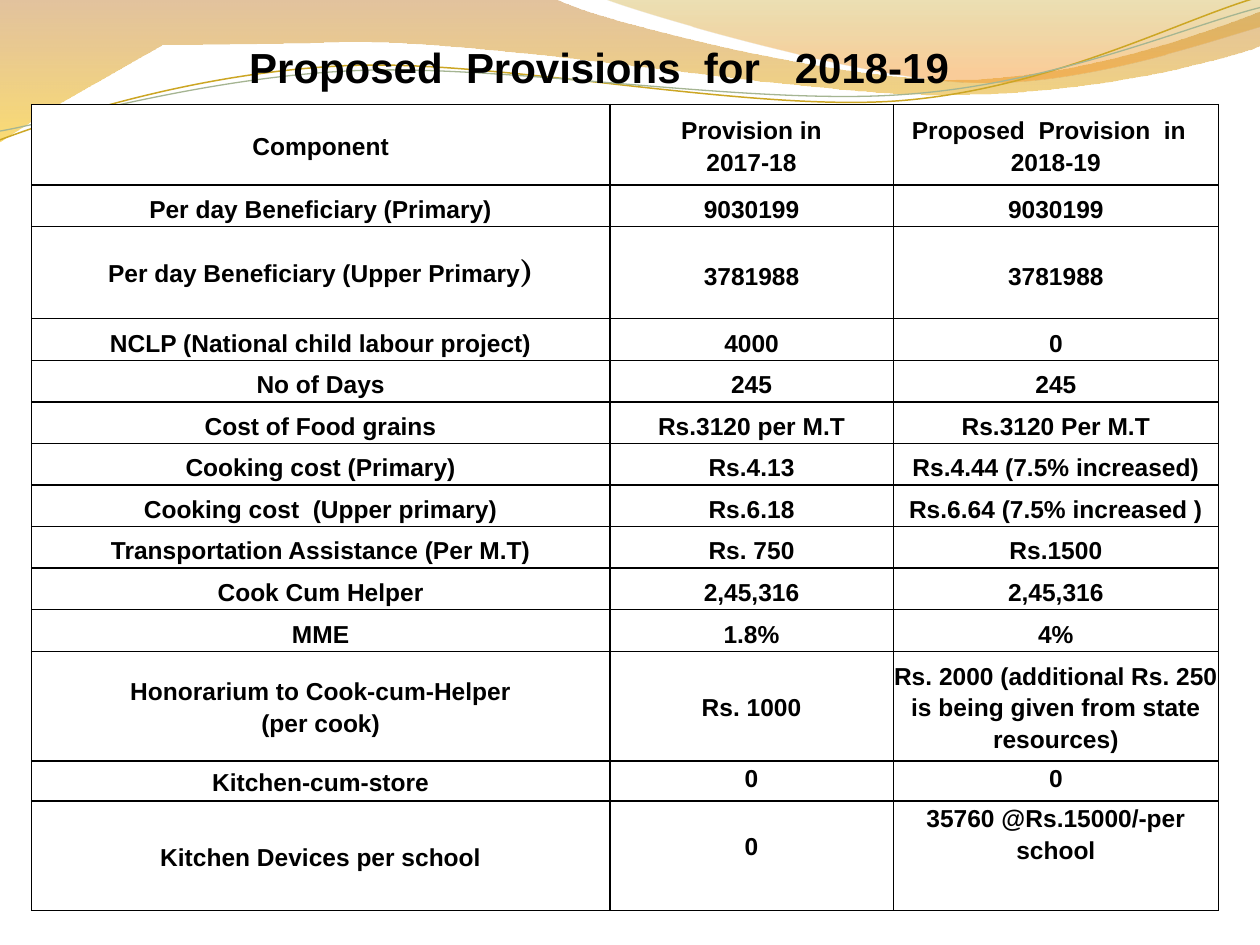
import math
from dataclasses import dataclass

import pptx
import pptx.dml.color
import pptx.enum.text
import pptx.oxml
import pptx.oxml.ns
import pptx.util
from lxml import etree

COLUMNS, ROWS = 10, 7.5
FONT = "Arial"
BLACK, WHITE = "000000", "FFFFFF"
DRAWING = "http://schemas.openxmlformats.org/drawingml/2006/main"
MIDDLE = pptx.enum.text.MSO_ANCHOR.MIDDLE
TOP = pptx.enum.text.MSO_ANCHOR.TOP
CENTER = pptx.enum.text.PP_ALIGN.CENTER
EXACT = pptx.util.Pt(20.4)
LOOSE = 1.15


@dataclass
class Stop:
    position: int
    color: str
    opacity: int


@dataclass
class Band:
    segments: str
    points: list[tuple[float, float]]
    stops: list[Stop]


@dataclass
class Wave:
    points: list[tuple[float, float]]
    color: str
    width: float


@dataclass
class Row:
    height: float
    texts: tuple[str, str, str]
    spacing: float = EXACT
    value_anchor: pptx.enum.text.MSO_ANCHOR = MIDDLE


BANDS = [
    Band("LCCLCC", [
        (0, 0), (4.4, -0.01), (4.76, 0.17), (6.64, 0.63), (7.58, 0.63),
        (8.53, 0.63), (9.58, 0.26), (10, 0.09), (10.01, 0.36),
        (9.83, 0.44), (8.7, 0.76), (7.46, 0.75), (6.22, 0.75), (3.82, 0.28),
        (2.57, 0.34), (1.29, 0.36), (0.46, 0.83), (-0.01, 1.13),
    ], [Stop(0, "C07A28", 45), Stop(100, "F7BF00", 55)]),
    Band("CCL", [
        (4.79, -0.01), (5.09, 0.11), (6.82, 0.62), (7.69, 0.65),
        (8.56, 0.69), (9.61, 0.32), (10, 0.21), (10, 0),
    ], [Stop(0, "C09709", 30), Stop(80, "F59320", 45)]),
]
WAVES = [
    Wave([(0, 1.11), (0.48, 0.93), (1.58, 0.57), (2.77, 0.52), (3.95, 0.47),
          (5.93, 0.89), (7.13, 0.8), (8.33, 0.71), (9.38, 0.15), (9.98, -0.02)],
         "CCA624", 0.85),
    Wave([(0, 1.04), (0.47, 0.96), (1.64, 0.61), (2.83, 0.56), (4.03, 0.51),
          (5.97, 0.84), (7.17, 0.75), (8.36, 0.67), (9.41, 0.21), (10, 0.06)],
         "A5B592", 0.75),
]
WAVE_TILT = -2.7
WAVE_CENTER = (4.99, 0.58)

TABLE_COLUMNS = (4.59, 2.25, 2.58)
TABLE_ROWS = [
    Row(0.64, ("Component", "Provision in\n2017-18", "Proposed  Provision  in   2018-19"), LOOSE),
    Row(0.33, ("Per day Beneficiary (Primary)", "9030199", "9030199")),
    Row(0.73, ("Per day Beneficiary (Upper Primary", "3781988", "3781988")),
    Row(0.33, ("NCLP (National child labour project)", "4000", "0")),
    Row(0.33, ("No of Days", "245", "245")),
    Row(0.33, ("Cost of Food grains", "Rs.3120 per M.T", "Rs.3120 Per M.T")),
    Row(0.33, ("Cooking cost (Primary)", "Rs.4.13", "Rs.4.44 (7.5% increased)")),
    Row(0.33, ("Cooking cost  (Upper primary)", "Rs.6.18", "Rs.6.64 (7.5% increased )")),
    Row(0.33, ("Transportation Assistance (Per M.T)", "Rs. 750", "Rs.1500")),
    Row(0.33, ("Cook Cum Helper", "2,45,316", "2,45,316")),
    Row(0.33, ("MME", "1.8%", "4%")),
    Row(0.87, ("Honorarium to Cook-cum-Helper\n(per cook)", "Rs. 1000",
               "Rs. 2000 (additional Rs. 250 is being given from state resources)"), LOOSE),
    Row(0.32, ("Kitchen-cum-store", "0", "0"), LOOSE, TOP),
    Row(0.87, ("Kitchen Devices per school", "0", "35760 @Rs.15000/-per school"), LOOSE, TOP),
]


def rgb(color: str):
    return pptx.dml.color.RGBColor.from_string(color)


def grid(cells: float):
    return pptx.util.Inches(cells)


def style_run(r, size: float, name: str = FONT) -> None:
    r.font.size = pptx.util.Pt(size)
    r.font.name = name
    r.font.bold = True
    r.font.color.rgb = rgb(BLACK)


def draw_curves(s, points, segments: str, close: bool):
    places = [(grid(x), grid(y)) for x, y in points]
    builder = s.shapes.build_freeform(*places[0], scale=1.0)
    builder.add_line_segments(places[1:], close=close)
    sp = builder.convert_to_shape()
    sp.shadow.inherit = False
    lines = iter(sp.element.findall(".//" + pptx.oxml.ns.qn("a:lnTo")))
    for segment in segments:
        line = next(lines)
        if segment == "C":
            curve = etree.Element(pptx.oxml.ns.qn("a:cubicBezTo"))
            line.addprevious(curve)
            for control in (line, next(lines), next(lines)):
                curve.append(control[0])
                control.getparent().remove(control)
    return sp


def draw_band(s, band: Band) -> None:
    sp = draw_curves(s, band.points, band.segments, True)
    sp.line.fill.background()
    stops = "".join(
        f'<a:gs pos="{stop.position * 1000}"><a:srgbClr val="{stop.color}">'
        f'<a:alpha val="{stop.opacity * 1000}"/></a:srgbClr></a:gs>'
        for stop in band.stops)
    gradient = pptx.oxml.parse_xml(
        f'<a:gradFill xmlns:a="{DRAWING}" rotWithShape="1"><a:gsLst>{stops}</a:gsLst>'
        '<a:lin ang="5400000" scaled="0"/></a:gradFill>')
    sp.element.spPr.find(pptx.oxml.ns.qn("a:custGeom")).addnext(gradient)


def draw_wave(s, wave: Wave) -> None:
    angle = math.radians(-WAVE_TILT)
    cx, cy = WAVE_CENTER
    level = [(cx + (x - cx) * math.cos(angle) - (y - cy) * math.sin(angle),
              cy + (x - cx) * math.sin(angle) + (y - cy) * math.cos(angle))
             for x, y in wave.points]
    sp = draw_curves(s, level, "CCC", False)
    sp.rotation = WAVE_TILT
    sp.fill.background()
    sp.line.color.rgb = rgb(wave.color)
    sp.line.width = pptx.util.Pt(wave.width)


def border_cell(cell) -> None:
    properties = cell._tc.get_or_add_tcPr()
    for index, side in enumerate(("lnL", "lnR", "lnT", "lnB")):
        properties.insert(index, pptx.oxml.parse_xml(
            f'<a:{side} xmlns:a="{DRAWING}" w="12700"><a:solidFill>'
            f'<a:srgbClr val="{BLACK}"/></a:solidFill></a:{side}>'))


def fill_cell(cell, text: str, spacing: float, anchor) -> None:
    cell.fill.solid()
    cell.fill.fore_color.rgb = rgb(WHITE)
    border_cell(cell)
    cell.margin_left = cell.margin_right = cell.margin_top = cell.margin_bottom = 0
    cell.vertical_anchor = anchor
    cell.text_frame.text = text
    for p in cell.text_frame.paragraphs:
        p.alignment = CENTER
        p.line_spacing = spacing
        for r in p.runs:
            style_run(r, 14)


def draw_table(s):
    frame = s.shapes.add_table(
        len(TABLE_ROWS), len(TABLE_COLUMNS), grid(0.25), grid(0.83),
        grid(sum(TABLE_COLUMNS)), grid(sum(row.height for row in TABLE_ROWS)))
    table = frame.table
    for column, width in zip(table.columns, TABLE_COLUMNS):
        column.width = grid(width)
    for i, row in enumerate(TABLE_ROWS):
        table.rows[i].height = grid(row.height)
        for j, text in enumerate(row.texts):
            fill_cell(table.cell(i, j), text, row.spacing, row.value_anchor if j else MIDDLE)
    bracket = table.cell(2, 0).text_frame.paragraphs[0].add_run()
    bracket.text = ")"
    style_run(bracket, 18, "Cambria")
    table.cell(len(TABLE_ROWS) - 1, 1).margin_top = grid(0.22)


def draw_title(s, text: str) -> None:
    tf = s.shapes.add_textbox(grid(0.67), grid(0.25), grid(8.08), grid(1.21)).text_frame
    tf.word_wrap = True
    tf.vertical_anchor = TOP
    tf.margin_top = grid(0.08)
    tf.margin_left = grid(0.19)
    tf.text = text
    p = tf.paragraphs[0]
    p.alignment = CENTER
    style_run(p.runs[0], 24)


def main() -> None:
    prs = pptx.Presentation()
    prs.slide_width, prs.slide_height = grid(COLUMNS), grid(ROWS)
    s = prs.slides.add_slide(prs.slide_layouts[6])
    for band in BANDS:
        draw_band(s, band)
    for wave in WAVES:
        draw_wave(s, wave)
    draw_table(s)
    draw_title(s, "Proposed  Provisions  for   2018-19")
    prs.save("out.pptx")


if __name__ == "__main__":
    main()
